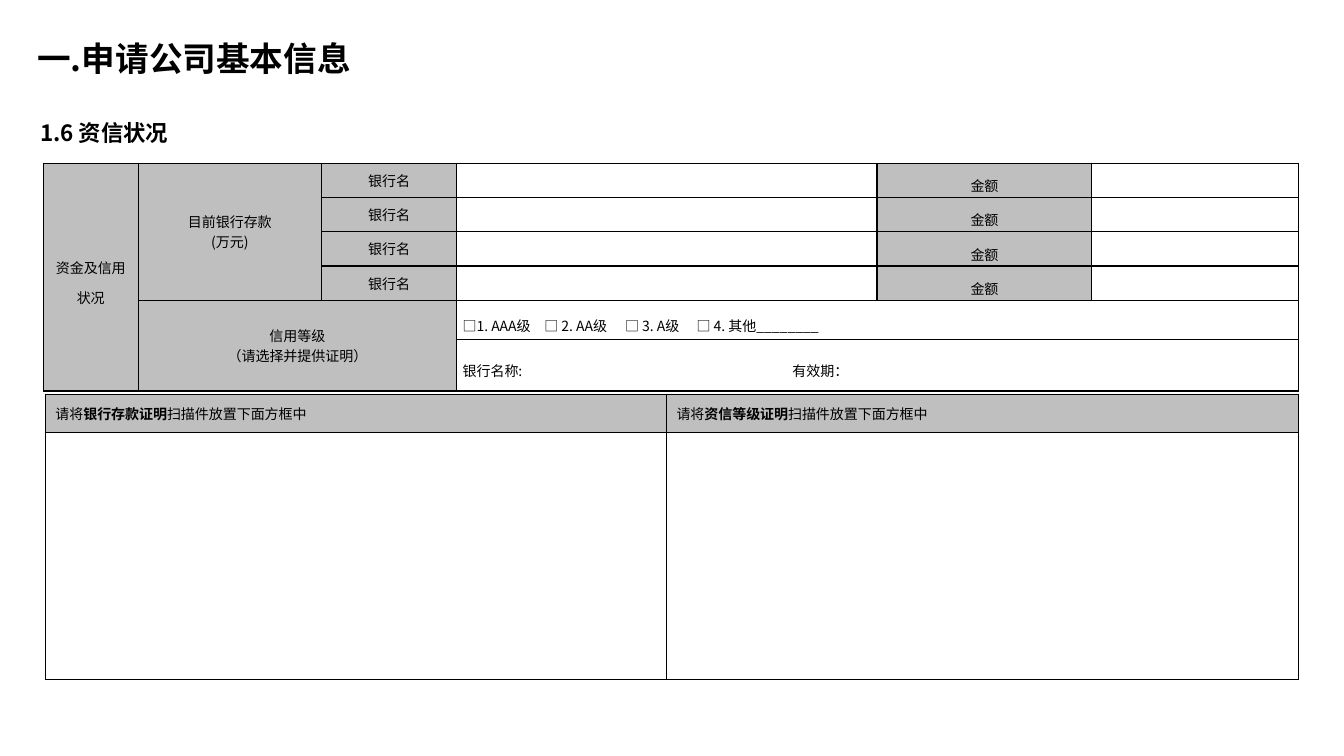
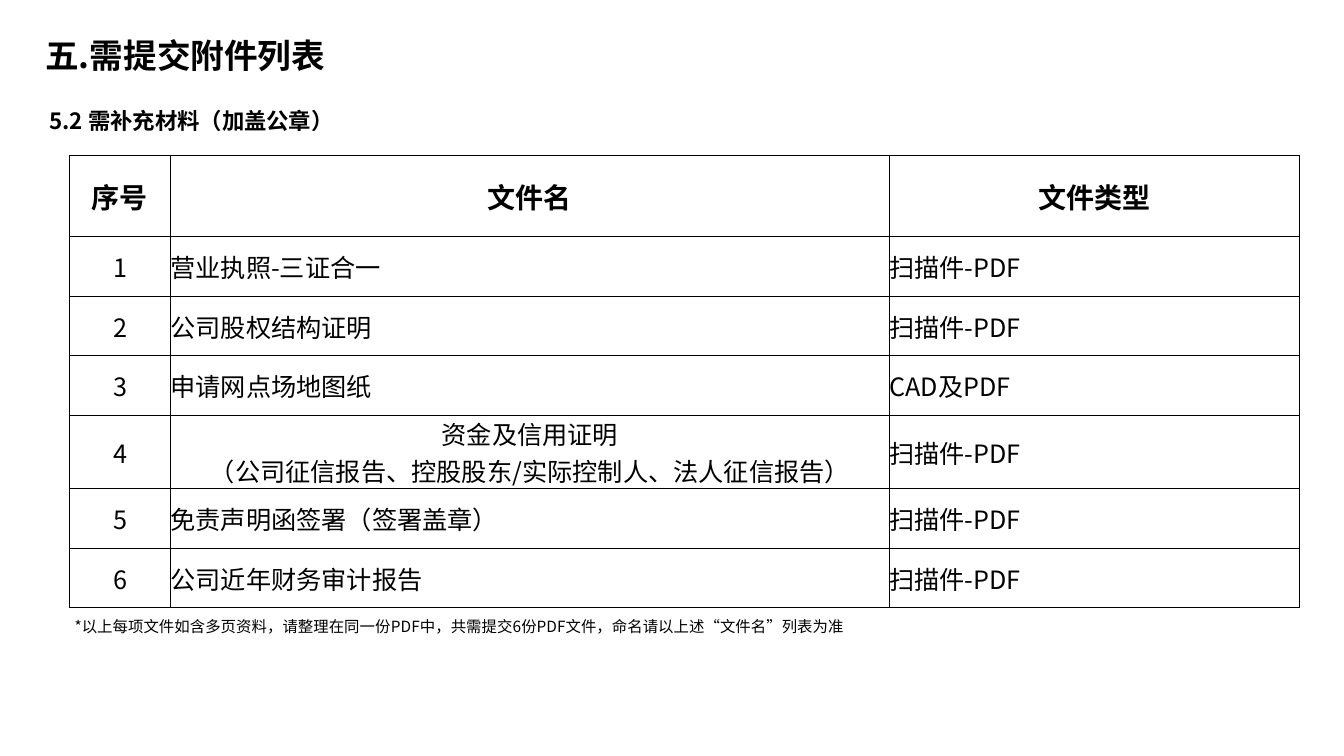
from lxml import etree
from pptx import Presentation
from pptx.dml.color import RGBColor
from pptx.enum.text import MSO_ANCHOR, PP_ALIGN
from pptx.oxml.ns import qn
from pptx.util import Pt

MIDDLE, TOP = MSO_ANCHOR.MIDDLE, MSO_ANCHOR.TOP
LEFT, CENTER = PP_ALIGN.LEFT, PP_ALIGN.CENTER

PX = 9144  # 100 px to the inch
FONT = "Noto Sans CJK SC"
LATIN_FONT = "Arial"
BLACK, WHITE, GREY = "000000", "FFFFFF", "BFBFBF"


def px(length):
    return length * PX


def rgb(value):
    return RGBColor.from_string(value)


class Deck:
    def __init__(self, width, height):
        self.deck = Presentation()
        self.deck.slide_width, self.deck.slide_height = px(width), px(height)
        self.page = None

    def add_page(self):
        self.page = self.deck.slides.add_slide(self.deck.slide_layouts[6])

    def add_lines(self, frame, lines, size, bold=False, font=FONT, align=LEFT,
                  spacing=1.0, tabs=()):
        """Each line is a string or a list of (text, bold) spans."""
        for index, line in enumerate(lines):
            para = frame.paragraphs[0] if index == 0 else frame.add_paragraph()
            para.alignment = align
            para.line_spacing = spacing
            if tabs:
                self.set_tabs(para, tabs)
            spans = [(line, bold)] if isinstance(line, str) else line
            for text, heavy in spans:
                span = para.add_run()
                span.text = text
                span.font.name = font
                span.font.size = Pt(size)
                span.font.bold = heavy
                span.font.color.rgb = rgb(BLACK)
                east_asian = etree.SubElement(span.font._element, qn("a:ea"))
                east_asian.set("typeface", FONT)

    def set_tabs(self, para, stops):
        tab_list = etree.SubElement(para._p.get_or_add_pPr(), qn("a:tabLst"))
        for stop in stops:
            etree.SubElement(tab_list, qn("a:tab"), pos=str(px(stop)), algn="l")

    def text(self, left, top, width, height, line, size, bold=False,
             anchor=MIDDLE, spacing=1.0):
        box = self.page.shapes.add_textbox(px(left), px(top), px(width), px(height))
        frame = box.text_frame
        frame.word_wrap = True
        frame.vertical_anchor = anchor
        frame.margin_left = frame.margin_right = 0
        frame.margin_top = frame.margin_bottom = 0
        self.add_lines(frame, [line], size, bold, spacing=spacing)

    def title(self, left, top, height, line):
        self.text(left, top, 1057, height, line, 24, True, spacing=0.9)

    def subtitle(self, left, top, line):
        self.text(left, top, 1000, 30, line, 16, True)

    def table(self, left, top, columns, rows, border):
        frame = self.page.shapes.add_table(
            len(rows), len(columns), px(left), px(top), px(sum(columns)), px(sum(rows)))
        table = frame.table
        table.first_row = table.horz_banding = False
        for column, width in zip(table.columns, columns):
            column.width = px(width)
        for row, height in zip(table.rows, rows):
            row.height = px(height)
        for cell in table.iter_cells():
            cell.margin_left = cell.margin_right = 0
            cell.margin_top = cell.margin_bottom = 0
            cell.fill.solid()
            cell.fill.fore_color.rgb = rgb(WHITE)
            self.set_borders(cell, border)
        return table

    def set_borders(self, cell, width):
        properties = cell._tc.get_or_add_tcPr()
        for index, side in enumerate(("lnL", "lnR", "lnT", "lnB")):
            line = etree.Element(qn("a:" + side), w=str(int(Pt(width))))
            fill = etree.SubElement(line, qn("a:solidFill"))
            etree.SubElement(fill, qn("a:srgbClr"), val=BLACK)
            properties.insert(index, line)

    def cell(self, cell, lines, size, inset=0, fill=WHITE, **style):
        cell.margin_left = cell.margin_right = px(inset)
        cell.vertical_anchor = MIDDLE
        cell.fill.fore_color.rgb = rgb(fill)
        self.add_lines(cell.text_frame, lines, size, **style)

    def shrink_empty_cells(self, table, size):
        """Keep the line height of empty cells from stretching their rows."""
        for cell in table.iter_cells():
            if not cell.text_frame.text:
                para = cell.text_frame.paragraphs[0]
                etree.SubElement(para._p, qn("a:endParaRPr"), sz=str(size * 100))


def add_credit_page(deck):
    deck.add_page()
    deck.title(37, 37, 46, "一.申请公司基本信息")
    deck.subtitle(40, 117, "1.6 资信状况")

    credit = deck.table(43, 162, [94, 182, 134, 417, 213, 205],
                        [34] * 4 + [39, 51], 1)
    for first, last in (((0, 0), (5, 0)), ((0, 1), (3, 1)), ((4, 1), (5, 2)),
                        ((4, 3), (4, 5)), ((5, 3), (5, 5))):
        credit.cell(*first).merge(credit.cell(*last))

    def label(row, column, lines, spacing=1.0):
        deck.cell(credit.cell(row, column), lines, 10, 6, GREY,
                  align=CENTER, spacing=spacing)

    label(0, 0, ["资金及信用状况"], 1.5)
    label(0, 1, ["目前银行存款", "(万元)"])
    label(4, 1, ["信用等级", "（请选择并提供证明）"])
    for row in range(4):
        label(row, 2, ["银行名"])
        label(row, 4, ["金额"], 1.5)
    for row, line, tabs in (
            (4, "□1. AAA级\t□ 2. AA级\t□ 3. A级\t□ 4. 其他________", (81, 161, 232)),
            (5, "银行名称:\t有效期：", (327,))):
        deck.cell(credit.cell(row, 3), [line], 10, 6, spacing=1.5, tabs=tabs)
    deck.shrink_empty_cells(credit, 10)

    scans = deck.table(45, 391, [616, 627], [38, 245], 0.75)
    for column, proof in enumerate(("银行存款证明", "资信等级证明")):
        line = [("请将", False), (proof, True), ("扫描件放置下面方框中", False)]
        deck.cell(scans.cell(0, column), [line], 10, 10, GREY, font=LATIN_FONT)


def add_attachment_page(deck):
    deck.add_page()
    deck.title(45, 29, 57, "五.需提交附件列表")
    deck.subtitle(49, 105, "5.2 需补充材料（加盖公章）")

    scan = "扫描件-PDF"
    files = [
        (["营业执照-三证合一"], scan),
        (["公司股权结构证明"], scan),
        (["申请网点场地图纸"], "CAD及PDF"),
        (["资金及信用证明", "（公司征信报告、控股股东/实际控制人、法人征信报告）"], scan),
        (["免责声明函签署（签署盖章）"], scan),
        (["公司近年财务审计报告"], scan),
    ]
    heights = [81] + [73 if len(names) > 1 else 59 for names, kind in files]
    table = deck.table(69, 154, [100, 713, 407], heights, 1)
    for column, heading in enumerate(("序号", "文件名", "文件类型")):
        deck.cell(table.cell(0, column), [heading], 20, bold=True, align=CENTER)
    for number, (names, kind) in enumerate(files, 1):
        deck.cell(table.cell(number, 0), [str(number)], 18, align=CENTER)
        deck.cell(table.cell(number, 1), names, 18,
                  align=CENTER if len(names) > 1 else LEFT)
        deck.cell(table.cell(number, 2), [kind], 18)

    deck.text(74, 616, 770, 40,
              "*以上每项文件如含多页资料，请整理在同一份PDF中，共需提交6份PDF文件，"
              "命名请以上述“文件名”列表为准", 11, anchor=TOP, spacing=0.8)


def main():
    deck = Deck(1333, 750)
    add_credit_page(deck)
    add_attachment_page(deck)
    deck.deck.save("out.pptx")


if __name__ == "__main__":
    main()
